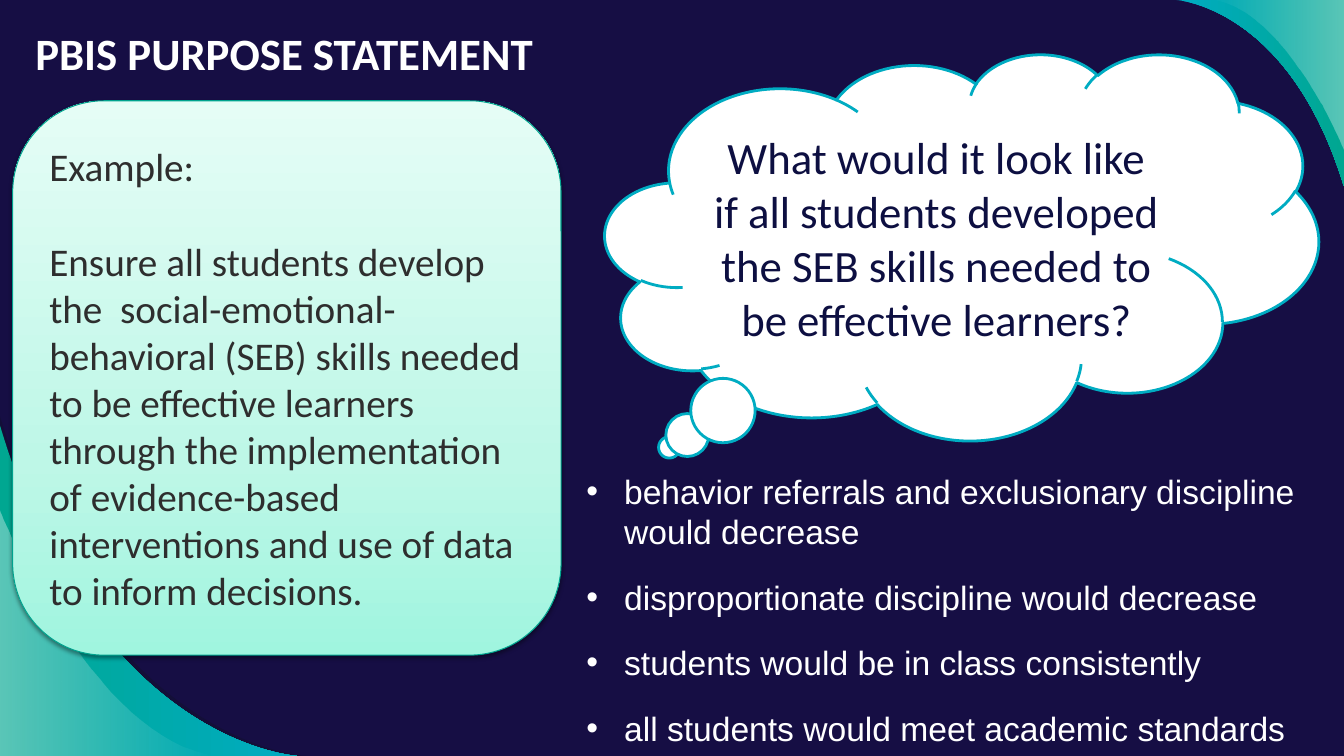
"""Build the purpose statement slide."""
from lxml import etree
from pptx import Presentation
from pptx import util as u
from pptx.dml.color import RGBColor
from pptx.enum import shapes, text
from pptx.oxml import ns

Cm, Pt = u.Cm, u.Pt
WIDE, HIGH = 33.87, 19.05
HUES = {"night": "160E44", "shade": "12102F", "blue": "00ACC2", "green": "00A791",
        "white": "FFFFFF", "navy": "0D0F41", "ink": "2E2E2E", "edge": "00A38E",
        "mint": "A0F5DF", "pale": "BEF7E7", "foam": "E5FDF6", "black": "000000"}
GOALS = ["behavior referrals and exclusionary discipline would decrease",
         "disproportionate discipline would decrease",
         "students would be in class consistently",
         "all students would meet academic standards"]
ASK = ("What would it look like if all students developed the SEB skills "
       "needed to be effective learners?")
AIM = ("Ensure all students develop the  social-emotional-behavioral (SEB) skills "
       "needed to be effective learners through the implementation of evidence-based "
       "interventions and use of data to inform decisions.")


def rgb(hue):
    return RGBColor.from_string(HUES[hue])


def sub(node, tag, **attrs):
    return etree.SubElement(node, ns.qn(tag), {k: str(v) for k, v in attrs.items()})


def tint(node, hue, alpha=100):
    color = sub(node, "a:srgbClr", val=HUES[hue])
    if alpha < 100:
        sub(color, "a:alpha", val=alpha * 1000)


def blend(shape, stops, angle=0):
    shape.fill.gradient()
    shape.fill.gradient_angle = angle
    items = shape.element.spPr.find(ns.qn("a:gradFill")).find(ns.qn("a:gsLst"))
    for old in list(items):
        items.remove(old)
    for place, hue, alpha in stops:
        tint(sub(items, "a:gs", pos=place * 1000), hue, alpha)


def swoosh(slide, points, corner):
    dots = [tuple(map(Cm, dot)) for dot in points]
    build = slide.shapes.build_freeform(*dots[0], scale=1.0)
    build.add_line_segments([dots[-1], tuple(map(Cm, corner))], close=True)
    shape = build.convert_to_shape()
    edge = next(shape.element.iter(ns.qn("a:lnTo")))
    bend = etree.Element(ns.qn("a:cubicBezTo"))
    for x, y in dots[1:]:
        sub(bend, "a:pt", x=x - shape.left, y=y - shape.top)
    edge.getparent().replace(edge, bend)
    shape.shadow.inherit = False
    shape.line.fill.background()
    return shape


def corners(slide):
    low, top = (0, HIGH), (WIDE, 0)
    shade = swoosh(slide, [(0, 10.49), (2.49, 18.77), (7.7, HIGH), (7.7, HIGH)], low)
    shade.fill.solid()
    shade.fill.fore_color.rgb = rgb("shade")
    solid = shade.element.spPr.find(ns.qn("a:solidFill"))
    sub(solid[0], "a:alpha", val=54000)
    teal = [("blue", 100), ("green", 100)]
    sheen = [("white", 0), ("white", 36)]
    bands = [
        ([(7.49, HIGH), (7.49, HIGH), (2.41, 18.77), (0, 10.72)], low, teal),
        ([(0, 12.85), (0, 12.85), (2.31, 18.67), (5.49, HIGH)], low, sheen),
        ([(29.64, 0), (29.64, 0), (32.49, 0.15), (WIDE, 4.7)], top, teal),
        ([(WIDE, 3.78), (WIDE, 3.78), (32.44, 0.23), (30.51, 0)], top, sheen)]
    for points, corner, pair in bands:
        ends = pair if corner == top else pair[::-1]
        stops = [(place, *end) for place, end in zip((0, 100), ends)]
        blend(swoosh(slide, points, corner), stops)


def write(para, words, size, hue, font="Calibri", bold=False):
    run = para.add_run()
    run.text = words
    run.font.name, run.font.size, run.font.bold = font, Pt(size), bold
    run.font.color.rgb = rgb(hue)


def box(slide, area, wrap=True):
    frame = slide.shapes.add_textbox(*map(Cm, area)).text_frame
    frame.word_wrap = wrap
    frame.auto_size = text.MSO_AUTO_SIZE.SHAPE_TO_FIT_TEXT
    return frame


def form(slide, kind, area, hue, width):
    shape = slide.shapes.add_shape(kind, *map(Cm, area))
    shape.shadow.inherit = False
    shape.line.color.rgb = rgb(hue)
    shape.line.width = Pt(width)
    shape.text_frame.word_wrap = True
    shape.text_frame.vertical_anchor = text.MSO_ANCHOR.MIDDLE
    return shape


def cloud(slide):
    shape = form(slide, shapes.MSO_SHAPE.CLOUD_CALLOUT,
                 (15.25, 1.35, 17.98, 9.73), "blue", 2)
    shape.adjustments[0], shape.adjustments[1] = -0.41, 0.52
    shape.fill.solid()
    shape.fill.fore_color.rgb = rgb("white")
    para = shape.text_frame.paragraphs[0]
    para.alignment = text.PP_ALIGN.CENTER
    write(para, ASK, 32, "navy")


def bullets(slide):
    frame = box(slide, (14.53, 11.74, 19.33, 7.31))
    for i, goal in enumerate(GOALS):
        para = frame.add_paragraph() if i else frame.paragraphs[0]
        props = para._p.get_or_add_pPr()
        props.set("marL", str(Cm(0.95)))
        props.set("indent", str(-Cm(0.95)))
        sub(props, "a:buFont", typeface="Arial")
        sub(props, "a:buChar", char="•")
        para.space_after = Pt(18)
        write(para, goal, 24, "white", "Arial")


def card(slide):
    shape = form(slide, shapes.MSO_SHAPE.ROUNDED_RECTANGLE,
                 (0.32, 2.54, 13.82, 13.97), "edge", 0.75)
    blend(shape, [(0, "mint", 100), (35, "pale", 100), (100, "foam", 100)], 90)
    glow = sub(shape.element.spPr.find(ns.qn("a:effectLst")), "a:outerShdw",
               blurRad=Pt(3.1), dist=Pt(1.6), dir=5400000, rotWithShape=0)
    tint(glow, "black", 38)
    frame = shape.text_frame
    head, body = frame.paragraphs[0], frame.add_paragraph()
    body.space_before = Pt(34)
    for para, words in ((head, "Example:"), (body, AIM)):
        para.alignment = text.PP_ALIGN.LEFT
        write(para, words, 28, "ink")


def main():
    deck = Presentation()
    deck.slide_width, deck.slide_height = Cm(WIDE), Cm(HIGH)
    slide = deck.slides.add_slide(deck.slide_layouts[6])
    slide.background.fill.solid()
    slide.background.fill.fore_color.rgb = rgb("night")
    corners(slide)
    title = box(slide, (0.64, 0.53, 13.18, 1.63), wrap=False)
    write(title.paragraphs[0], "PBIS PURPOSE STATEMENT", 32, "white", bold=True)
    cloud(slide)
    bullets(slide)
    card(slide)
    deck.save("out.pptx")


if __name__ == "__main__":
    main()
